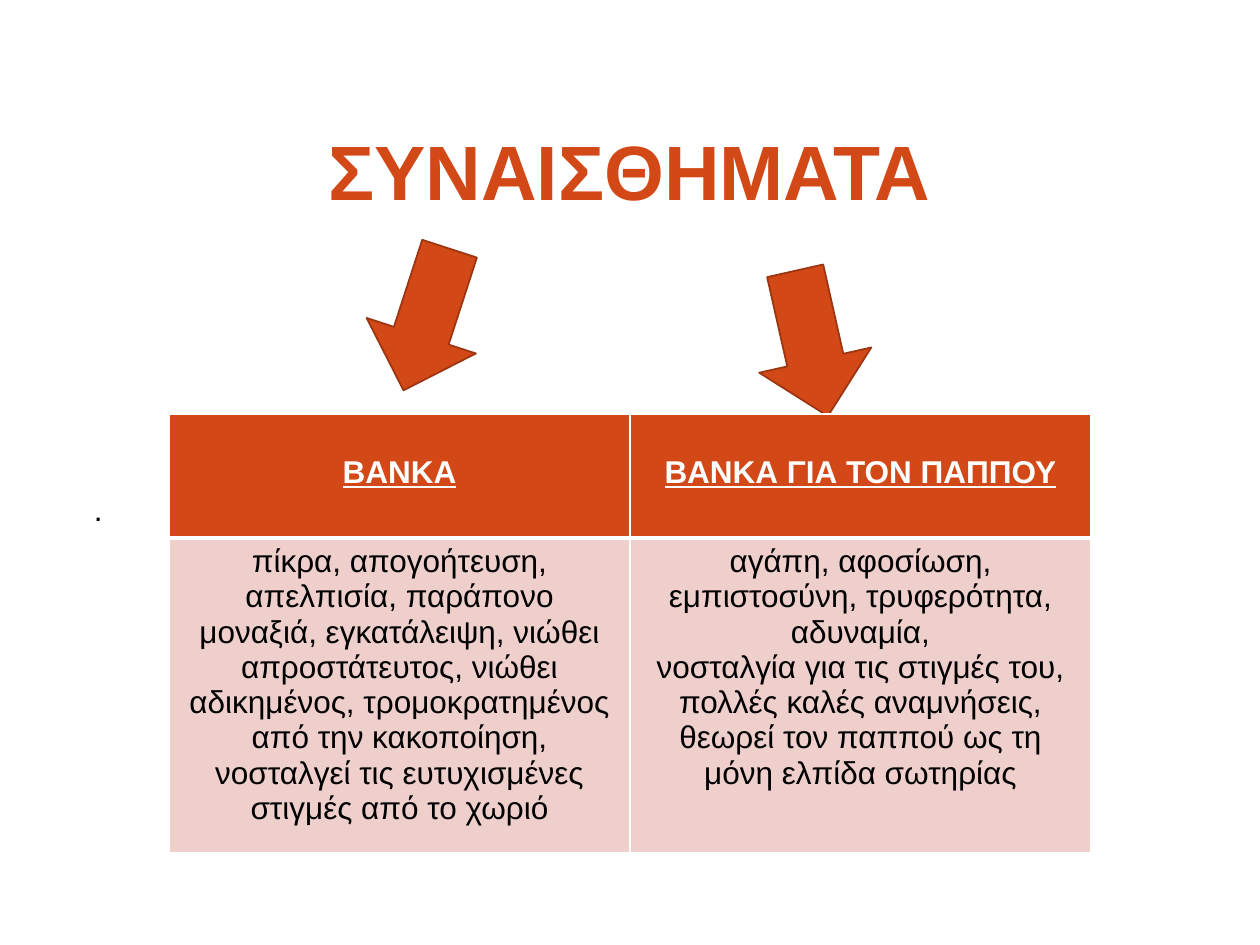
import pptx
import pptx.util
import pptx.dml.color
import pptx.enum.shapes
import pptx.enum.text
import pptx.oxml
import pptx.oxml.ns

PX = 914400 / 126
ORANGE, DARK_ORANGE, PINK = "D34817", "9C3511", "EFCFCC"
WHITE, BLACK = "FFFFFF", "000000"
ALIGN = pptx.enum.text.PP_ALIGN
rgb = pptx.dml.color.RGBColor.from_string


def px(*lengths):
    return [round(length * PX) for length in lengths]


def write(holder, text, size=18, color=BLACK, bold=False, underline=False,
          align=ALIGN.CENTER, margins=(0, 0, 0, 0)):
    """Fill a shape or table cell, one paragraph per line of text."""
    frame = holder.text_frame
    is_cell = isinstance(holder, pptx.table._Cell)
    if not is_cell:
        frame.word_wrap = True
    box = holder if is_cell else frame
    box.margin_left, box.margin_top, box.margin_right, box.margin_bottom = px(*margins)
    frame.text = text
    for paragraph in frame.paragraphs:
        paragraph.alignment = align
        paragraph.space_before = pptx.util.Pt(0)
        font = paragraph.font
        font.name, font.size = "Arial", pptx.util.Pt(size)
        font.bold, font.underline = bold, underline
        font.color.rgb = rgb(color)


deck = pptx.Presentation()
deck.slide_width, deck.slide_height = px(1260, 945)
slide = deck.slides.add_slide(deck.slide_layouts[5])

title = slide.shapes.title
title.left, title.top, title.width, title.height = px(94, 106, 1071, 127)
title.text_frame.vertical_anchor = pptx.enum.text.MSO_ANCHOR.MIDDLE
write(title, "ΣΥΝΑΙΣΘΗΜΑΤΑ", size=44, color=ORANGE, bold=True)

dot = slide.shapes.add_textbox(*px(94, 490, 60, 36))
write(dot, ".", align=ALIGN.LEFT)

for left, top, angle in [(737, 286, 77.3), (352, 262, 108)]:
    arrow = slide.shapes.add_shape(pptx.enum.shapes.MSO_SHAPE.RIGHT_ARROW,
                                   *px(left, top, 149, 115))
    arrow.rotation = angle
    arrow.shadow.inherit = False
    arrow.fill.solid()
    arrow.fill.fore_color.rgb = rgb(ORANGE)
    arrow.line.color.rgb = rgb(DARK_ORANGE)
    arrow.line.width = pptx.util.Pt(1)

feelings = [
    ["ΒΑΝΚΑ", "ΒΑΝΚΑ ΓΙΑ ΤΟΝ ΠΑΠΠΟΥ"],
    ["πίκρα, απογοήτευση, απελπισία, παράπονο\n"
     "μοναξιά, εγκατάλειψη, νιώθει απροστάτευτος, νιώθει αδικημένος, "
     "τρομοκρατημένος από την κακοποίηση, νοσταλγεί τις ευτυχισμένες "
     "στιγμές από το χωριό",
     "αγάπη, αφοσίωση, εμπιστοσύνη, τρυφερότητα, αδυναμία,\n"
     "νοσταλγία για τις στιγμές του, πολλές καλές αναμνήσεις,\n"
     "θεωρεί τον παππού ως τη μόνη ελπίδα σωτηρίας"],
]
table = slide.shapes.add_table(2, 2, *px(169, 414, 922, 418)).table
for column in table.columns:
    column.width = px(461)[0]
for row, height in zip(table.rows, (124, 294)):
    row.height = px(height)[0]

for r, row_texts in enumerate(feelings):
    header = r == 0
    for c, text in enumerate(row_texts):
        cell = table.cell(r, c)
        write(cell, text, color=WHITE if header else BLACK, bold=header,
              underline=header, margins=(13, 41 if header else 6, 13, 6))
        for side in "LRTB":
            thick = side == ("B" if header else "T")
            cell._tc.get_or_add_tcPr().append(pptx.oxml.parse_xml(
                f'<a:ln{side} {pptx.oxml.ns.nsdecls("a")} w="{38100 if thick else 12700}">'
                f'<a:solidFill><a:srgbClr val="{WHITE}"/></a:solidFill></a:ln{side}>'))
        cell.fill.solid()
        cell.fill.fore_color.rgb = rgb(ORANGE if header else PINK)

deck.save("out.pptx")
